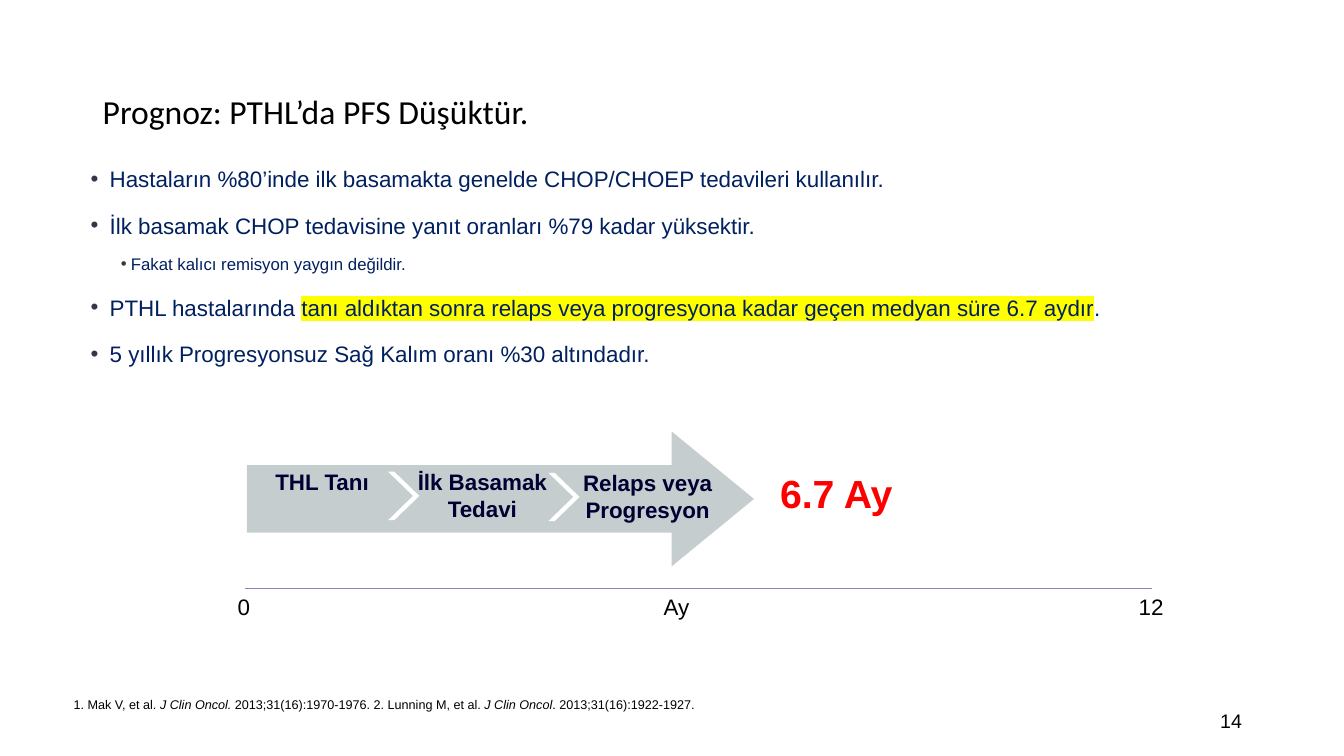
"""Build the slide on progression-free survival in PTHL."""
from lxml.etree import SubElement
from pptx import Presentation
from pptx.dml.color import RGBColor
from pptx.enum.shapes import MSO_CONNECTOR, MSO_SHAPE
from pptx.enum.text import MSO_ANCHOR, PP_ALIGN
from pptx.oxml.ns import qn
from pptx.util import Inches, Pt

BLACK = RGBColor(0x00, 0x00, 0x00)
WHITE = RGBColor(0xFF, 0xFF, 0xFF)
RED = RGBColor(0xFF, 0x00, 0x00)
NAVY = RGBColor(0x00, 0x20, 0x60)
DARK_NAVY = RGBColor(0x00, 0x00, 0x32)
GREY = RGBColor(0xC5, 0xCD, 0xCE)
LILAC = RGBColor(0x87, 0x84, 0xC7)
BULLET_COLOR = RGBColor(0x37, 0x35, 0x45)
HIGHLIGHT = RGBColor(0xFF, 0xFF, 0x00)

SLIDE_WIDTH, SLIDE_HEIGHT = Inches(13.33), Inches(7.5)
COLUMN, ROW = SLIDE_WIDTH / 160, SLIDE_HEIGHT / 90
AXIS_ROW = 70.08
AXIS_LABELS = ["0", "Ay", "12"]
AXIS_CENTERS = [29.04, 80.52, 137.04]
LABEL_WIDTH = 8.88

STAGES = [
    ("THL Tanı", 25.8, 55.2, 25.08),
    ("İlk Basamak Tedavi", 46.2, 55.2, 22.44),
    ("Relaps veya Progresyon", 66.24, 55.32, 21.72),
]
CHEVRONS = [(46.2, 56.16), (65.28, 56.28)]

BULLETS = [
    (0, ["Hastaların %80’inde ilk basamakta genelde CHOP/CHOEP tedavileri kullanılır."]),
    (0, ["İlk basamak CHOP tedavisine yanıt oranları %79 kadar yüksektir."]),
    (1, ["Fakat kalıcı remisyon yaygın değildir."]),
    (0, ["PTHL hastalarında ",
         "tanı aldıktan sonra relaps veya progresyona kadar geçen medyan süre 6.7 aydır",
         "."]),
    (0, ["5 yıllık Progresyonsuz Sağ Kalım oranı %30 altındadır."]),
]
LEVELS = [(16, 0.19, 0.19, 4.5), (12, 0.4, 0.1, 3.5)]

REFERENCES = [
    "1. Mak V, et al. ", "J Clin Oncol. ",
    "2013;31(16):1970-1976. 2. Lunning M, et al. ", "J Clin Oncol",
    ". 2013;31(16):1922-1927.",
]


def grid(left, top, width, height):
    """Turn grid columns and rows into slide lengths."""
    return (round(left * COLUMN), round(top * ROW),
            round(width * COLUMN), round(height * ROW))


def set_font(paragraph, size, color, bold=False, name="Arial"):
    """Set the font shared by all runs of a paragraph."""
    font = paragraph.font
    font.name, font.size, font.bold = name, Pt(size), bold
    font.color.rgb = color


def add_frame(slide, box, anchor=MSO_ANCHOR.TOP):
    """Add a wrapping text box and return its text frame."""
    frame = slide.shapes.add_textbox(*grid(*box)).text_frame
    frame.word_wrap = True
    frame.vertical_anchor = anchor
    return frame


def add_label(slide, text, box, size, color, bold=False, name="Arial",
              align=PP_ALIGN.CENTER, anchor=MSO_ANCHOR.TOP):
    """Add a text box with one paragraph and return the paragraph."""
    paragraph = add_frame(slide, box, anchor).paragraphs[0]
    paragraph.text = text
    paragraph.alignment = align
    set_font(paragraph, size, color, bold, name)
    return paragraph


def add_block(slide, preset, box, color, adjustments):
    """Add a plain filled shape without an outline."""
    shape = slide.shapes.add_shape(preset, *grid(*box))
    shape.shadow.inherit = False
    shape.fill.solid()
    shape.fill.fore_color.rgb = color
    shape.line.fill.background()
    for index, value in enumerate(adjustments):
        shape.adjustments[index] = value


def add_axis(slide):
    """Draw the month axis with its labels."""
    left, top, width, _ = grid(29.16, AXIS_ROW, 108, 0)
    axis = slide.shapes.add_connector(
        MSO_CONNECTOR.STRAIGHT, left, top, left + width, top)
    axis.line.color.rgb = LILAC
    axis.line.width = Pt(1)
    SubElement(axis._element.spPr, qn("a:effectLst"))
    for text, center in zip(AXIS_LABELS, AXIS_CENTERS):
        box = (center - LABEL_WIDTH / 2, AXIS_ROW, LABEL_WIDTH, 4.44)
        add_label(slide, text, box, 16, BLACK)


def set_bullet(paragraph, margin, hanging):
    """Give a paragraph a coloured bullet and a hanging indent."""
    properties = paragraph._p.get_or_add_pPr()
    properties.set("marL", str(Inches(margin)))
    properties.set("indent", str(-Inches(hanging)))
    color = SubElement(properties, qn("a:buClr"))
    SubElement(color, qn("a:srgbClr"), val=str(BULLET_COLOR))
    SubElement(properties, qn("a:buFont"), typeface="Arial")
    SubElement(properties, qn("a:buChar"), char="•")


def highlight(run):
    """Mark a run with the highlight colour."""
    mark = SubElement(run._r.get_or_add_rPr(), qn("a:highlight"))
    SubElement(mark, qn("a:srgbClr"), val=str(HIGHLIGHT))


def add_bullets(slide):
    """Add the bulleted findings, with every second run highlighted."""
    frame = add_frame(slide, (9.6, 17.5, 138.96, 31.2))
    for number, (level, texts) in enumerate(BULLETS):
        paragraph = frame.add_paragraph() if number else frame.paragraphs[0]
        size, margin, hanging, space = LEVELS[level]
        paragraph.level = level
        paragraph.line_spacing = 1.5
        if number:
            paragraph.space_before = Pt(space)
        set_bullet(paragraph, margin, hanging)
        set_font(paragraph, size, NAVY)
        for index, text in enumerate(texts):
            run = paragraph.add_run()
            run.text = text
            if index % 2:
                highlight(run)


def add_references(slide):
    """Add the reference line, with the journal names in italics."""
    frame = add_frame(slide, (8.76, 83.28, 111.36, 1.44), MSO_ANCHOR.BOTTOM)
    frame.margin_left = frame.margin_right = 0
    frame.margin_top = frame.margin_bottom = 0
    paragraph = frame.paragraphs[0]
    set_font(paragraph, 9, BLACK)
    for index, text in enumerate(REFERENCES):
        run = paragraph.add_run()
        run.text = text
        run.font.italic = index % 2 == 1


def main():
    """Build and save the presentation."""
    presentation = Presentation()
    presentation.slide_width = SLIDE_WIDTH
    presentation.slide_height = SLIDE_HEIGHT
    slide = presentation.slides.add_slide(presentation.slide_layouts[6])

    title = add_label(slide, "Prognoz: PTHL’da PFS Düşüktür.", (11.04, 4.8, 138, 17.4),
                      24, BLACK, name="Calibri", align=PP_ALIGN.LEFT,
                      anchor=MSO_ANCHOR.MIDDLE)
    title.line_spacing = 0.9
    add_bullets(slide)

    add_block(slide, MSO_SHAPE.RIGHT_ARROW, (29.4, 51.36, 60.36, 16.08), GREY, [0.5, 0.61])
    for left, top in CHEVRONS:
        add_block(slide, MSO_SHAPE.CHEVRON, (left, top, 3.72, 5.76), WHITE, [0.8])
    for text, left, top, width in STAGES:
        add_label(slide, text, (left, top, width, 7.68), 16, DARK_NAVY, bold=True)
    add_label(slide, "6.7 Ay", (91.68, 55.32, 15.84, 6.84), 28, RED, bold=True,
              align=PP_ALIGN.LEFT)
    add_axis(slide)

    add_references(slide)
    add_label(slide, "14", (113.04, 83.4, 36, 4.8), 14, BLACK,
              align=PP_ALIGN.RIGHT, anchor=MSO_ANCHOR.MIDDLE)
    presentation.save("out.pptx")


if __name__ == "__main__":
    main()
